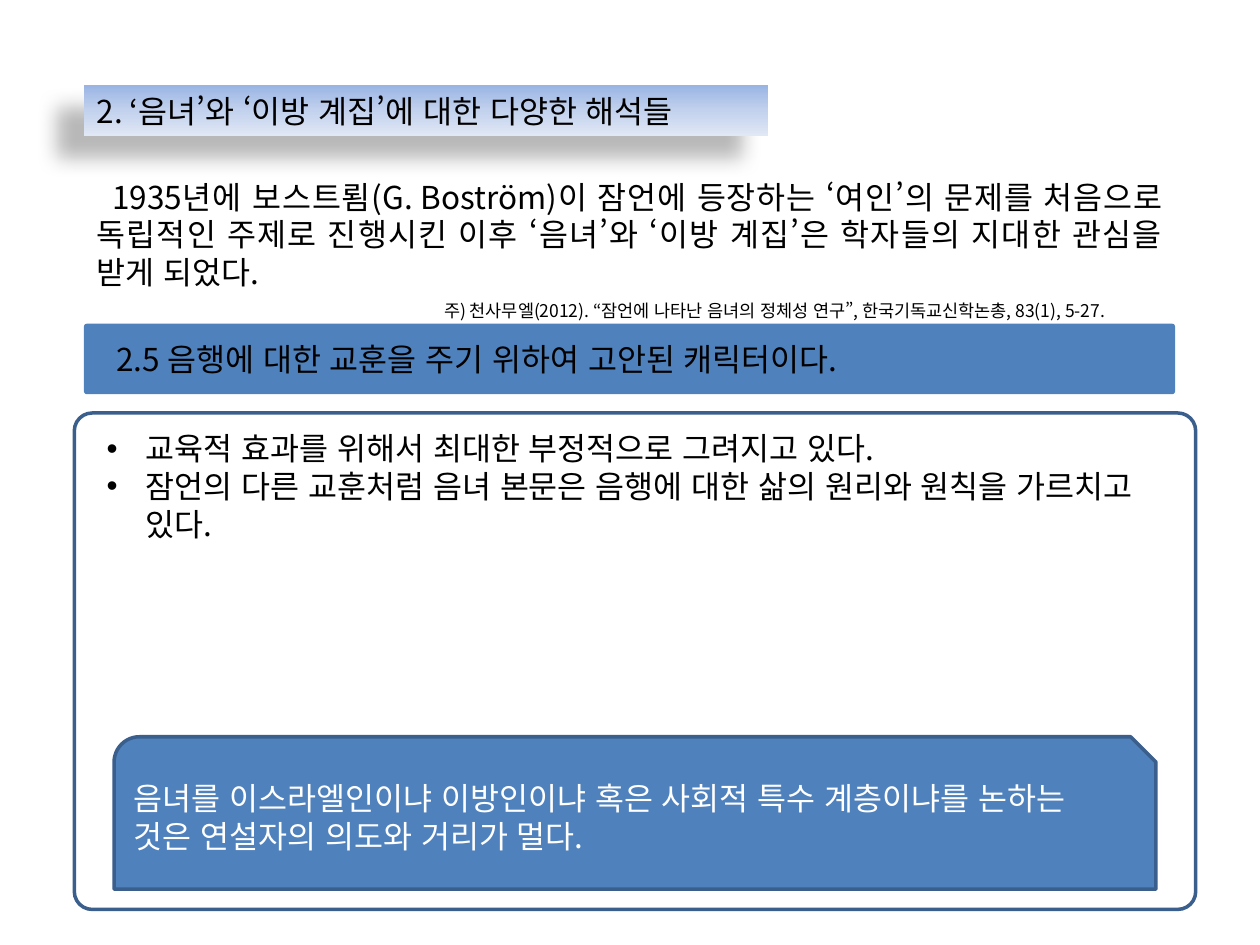
from copy import deepcopy

from lxml.etree import SubElement
from pptx import Presentation
from pptx.dml.color import RGBColor
from pptx.enum.lang import MSO_LANGUAGE_ID as Language
from pptx.enum.shapes import MSO_SHAPE as Shape
from pptx.enum.text import MSO_ANCHOR as Anchor, MSO_AUTO_SIZE as AutoSize, PP_ALIGN as Align
from pptx.oxml.ns import qn
from pptx.util import Pt

COLORS = {
    "text": "000000", "light": "FFFFFF", "accent": "4F81BD", "border": "3A5F8C",
    "head_top": "9AB5E4", "head_mid": "C2D1ED", "head_end": "E1E8F5", "shadow": "000000",
}
FONT = "Noto Sans CJK KR"


def rgb(name):
    return RGBColor.from_string(COLORS[name])


def write(shape, *lines, size=18, color="text", align=Align.LEFT, anchor=Anchor.TOP,
          indent=0, bullet=False):
    frame = shape.text_frame
    frame.word_wrap = True
    frame.auto_size = AutoSize.NONE
    frame.vertical_anchor = anchor
    for number, line in enumerate(lines):
        paragraph = frame.add_paragraph() if number else frame.paragraphs[0]
        paragraph.alignment = align
        paragraph.space_before = Pt(0)
        props = paragraph._p.get_or_add_pPr()
        props.set("marL", str(Pt(indent) if bullet else 0))
        props.set("indent", str(Pt(-indent if bullet else indent)))
        if bullet:
            SubElement(props, qn("a:buFont"), typeface="Arial")
            SubElement(props, qn("a:buChar"), char="•")
        else:
            SubElement(props, qn("a:buNone"))
        run = paragraph.add_run()
        run.text = line
        run.font.size = Pt(size)
        run.font.name = FONT
        run.font.language_id = Language.KOREAN
        run.font.color.rgb = rgb(color)
        SubElement(run._r.get_or_add_rPr(), qn("a:ea"), typeface=FONT)


class SlideBuilder:
    def __init__(self, slide):
        self.slide = slide

    def placeholder(self, index, left, top, width, height):
        holder = self.slide.placeholders[index]
        holder.left, holder.top = Pt(left), Pt(top)
        holder.width, holder.height = Pt(width), Pt(height)
        return holder

    def text(self, left, top, width, height, *lines, **style):
        box = self.slide.shapes.add_textbox(Pt(left), Pt(top), Pt(width), Pt(height))
        write(box, *lines, **style)

    def panel(self, kind, left, top, width, height, fill=None, line=None, corner=None):
        panel = self.slide.shapes.add_shape(kind, Pt(left), Pt(top), Pt(width), Pt(height))
        panel.shadow.inherit = False
        if corner is not None:
            panel.adjustments[0] = corner
        if fill:
            panel.fill.solid()
            panel.fill.fore_color.rgb = rgb(fill)
        else:
            panel.fill.background()
        if line:
            panel.line.color.rgb = rgb(line)
            panel.line.width = Pt(2)
        else:
            panel.line.fill.background()
        return panel

    def gradient(self, shape, *names):
        shape.fill.gradient()
        shape.fill.gradient_angle = 270
        stop_list = shape._element.spPr.find(".//" + qn("a:gsLst"))
        stop_list.insert(1, deepcopy(stop_list[0]))
        for number, (stop, name) in enumerate(zip(shape.fill.gradient_stops, names)):
            stop.position = number / (len(names) - 1)
            stop.color.rgb = rgb(name)

    def drop_shadow(self, shape):
        shape.shadow.inherit = False
        effects = shape._element.spPr.find(qn("a:effectLst"))
        shadow = SubElement(effects, qn("a:outerShdw"), blurRad=str(Pt(11.8)),
                            dist=str(Pt(19.7)), dir=str(141 * 60000), rotWithShape="0")
        tone = SubElement(shadow, qn("a:srgbClr"), val=COLORS["shadow"])
        SubElement(tone, qn("a:alpha"), val="28000")


def main():
    deck = Presentation()
    deck.slide_width, deck.slide_height = Pt(720), Pt(540)
    page = SlideBuilder(deck.slides.add_slide(deck.slide_layouts[1]))

    # Section heading
    heading = page.placeholder(0, 48, 48.7, 391, 29)
    page.gradient(heading, "head_top", "head_mid", "head_end")
    page.drop_shadow(heading)
    write(heading, "2. ‘음녀’와 ‘이방 계집’에 대한 다양한 해석들")

    # Introduction
    page.text(48, 98, 623.5, 72.7,
              "1935년에 보스트룀(G. Boström)이 잠언에 등장하는 ‘여인’의 문제를 처음으로 "
              "독립적인 주제로 진행시킨 이후 ‘음녀’와 ‘이방 계집’은 학자들의 지대한 관심을 "
              "받게 되었다.", align=Align.JUSTIFY, indent=9)

    # Interpretation with its arguments
    page.panel(Shape.ROUNDED_RECTANGLE, 42.5, 236, 640.8, 283.7,
               line="border", corner=0.036)
    arguments = page.placeholder(1, 53.7, 241.7, 617.8, 72.7)
    write(arguments,
          "교육적 효과를 위해서 최대한 부정적으로 그려지고 있다.",
          "잠언의 다른 교훈처럼 음녀 본문은 음행에 대한 삶의 원리와 원칙을 가르치고 있다.",
          indent=22.5, bullet=True)

    # Conclusion
    conclusion = page.panel(Shape.SNIP_ROUND_RECTANGLE, 65.2, 421, 595.4, 87.1,
                            fill="accent", line="border")
    write(conclusion,
          "음녀를 이스라엘인이냐 이방인이냐 혹은 사회적 특수 계층이냐를 논하는 "
          "것은 연설자의 의도와 거리가 멀다.", color="light", anchor=Anchor.MIDDLE)

    # Interpretation title bar
    page.panel(Shape.ROUNDED_RECTANGLE, 48, 185, 623.5, 40.3, fill="accent", corner=0.041)
    page.text(59.5, 190.8, 583.9, 28.8, "2.5 음행에 대한 교훈을 주기 위하여 고안된 캐릭터이다.")

    # Citation
    page.text(246.7, 167.8, 430.6, 19.4,
              "주) 천사무엘(2012). “잠언에 나타난 음녀의 정체성 연구”, "
              "한국기독교신학논총, 83(1), 5-27.", size=10)

    deck.save("out.pptx")


if __name__ == "__main__":
    main()
